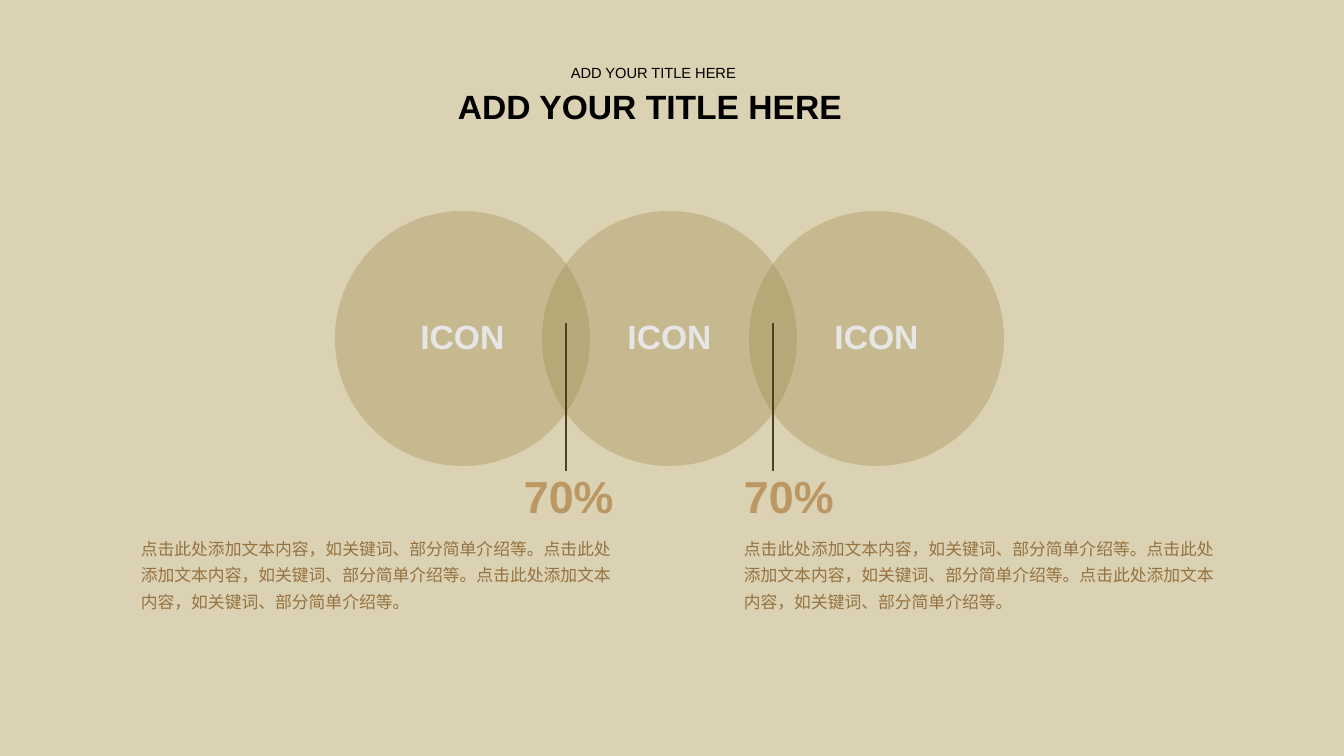
from lxml import etree
from pptx import Presentation
from pptx.dml.color import RGBColor
from pptx.enum.shapes import MSO_CONNECTOR, MSO_SHAPE
from pptx.enum.text import MSO_ANCHOR, PP_ALIGN
from pptx.oxml.ns import qn
from pptx.util import Pt

EMU_PER_PX = 914400 / 100.8
OVAL = MSO_SHAPE.OVAL
STRAIGHT = MSO_CONNECTOR.STRAIGHT
MIDDLE = MSO_ANCHOR.MIDDLE
CENTER = PP_ALIGN.CENTER

FONT = "Arial"
SAND = RGBColor(0xDB, 0xD1, 0xB3)
OLIVE = RGBColor(0x96, 0x84, 0x40)
DARK_OLIVE = RGBColor(0x4B, 0x42, 0x20)
TAN = RGBColor(0xBB, 0x97, 0x63)
BROWN = RGBColor(0x95, 0x73, 0x41)
PALE_GRAY = RGBColor(0xE7, 0xE6, 0xE6)
BLACK = RGBColor(0, 0, 0)

TITLE = "ADD YOUR TITLE HERE"
DESCRIPTION = "点击此处添加文本内容，如关键词、部分简单介绍等。" * 3
CIRCLE_LEFT, CIRCLE_TOP, CIRCLE_SIZE = 335, 211, 255
CIRCLE_STEP = 207
LINE_X, LINE_TOP, LINE_BOTTOM = 566, 323, 471


def px(value):
    return round(value * EMU_PER_PX)


def format_text(text_frame, text, size, color, bold=False, spacing=1.0):
    text_frame.text = text
    paragraph = text_frame.paragraphs[0]
    paragraph.line_spacing = spacing
    font = paragraph.runs[0].font
    font.name = FONT
    font.size = Pt(size)
    font.bold = bold
    font.color.rgb = color


def add_text(slide, box, text, size, color, bold=False, spacing=1.0, wrap=True):
    text_box = slide.shapes.add_textbox(*map(px, box))
    text_box.text_frame.word_wrap = wrap
    format_text(text_box.text_frame, text, size, color, bold, spacing)


def add_icon_circle(slide, left):
    circle = slide.shapes.add_shape(
        OVAL, px(left), px(CIRCLE_TOP), px(CIRCLE_SIZE), px(CIRCLE_SIZE))
    circle.shadow.inherit = False
    circle.line.fill.background()
    circle.fill.solid()
    circle.fill.fore_color.rgb = OLIVE
    color = circle.fill._xPr.find(qn("a:solidFill"))[0]
    etree.SubElement(color, qn("a:alpha")).set("val", "30000")
    format_text(circle.text_frame, "ICON", 24, PALE_GRAY, bold=True, spacing=0.9)
    circle.text_frame.vertical_anchor = MIDDLE
    circle.text_frame.paragraphs[0].alignment = CENTER


def add_pointer_line(slide, x):
    line = slide.shapes.add_connector(
        STRAIGHT, px(x), px(LINE_TOP), px(x), px(LINE_BOTTOM))
    line.line.color.rgb = DARK_OLIVE
    line.line.width = Pt(1)
    etree.SubElement(line._element.spPr, qn("a:effectLst"))


def main():
    presentation = Presentation()
    presentation.slide_width = px(1344)
    presentation.slide_height = px(756)
    slide = presentation.slides.add_slide(presentation.slide_layouts[6])
    slide.background.fill.solid()
    slide.background.fill.fore_color.rgb = SAND

    add_text(slide, (448, 86, 410, 43), TITLE, 24, BLACK, bold=True, spacing=0.9)
    add_text(slide, (561, 61, 188, 18), TITLE, 10.5, BLACK, spacing=0.9)

    for index in range(3):
        add_icon_circle(slide, CIRCLE_LEFT + index * CIRCLE_STEP)
    for index in range(2):
        add_pointer_line(slide, LINE_X + index * CIRCLE_STEP)

    for percent_left, description_left in ((514, 131), (734, 734)):
        add_text(slide, (percent_left, 464, 111, 64), "70%", 32, TAN,
                 bold=True, wrap=False)
        add_text(slide, (description_left, 528, 494, 90), DESCRIPTION, 12, BROWN,
                 spacing=1.3)

    presentation.save("out.pptx")


if __name__ == "__main__":
    main()
